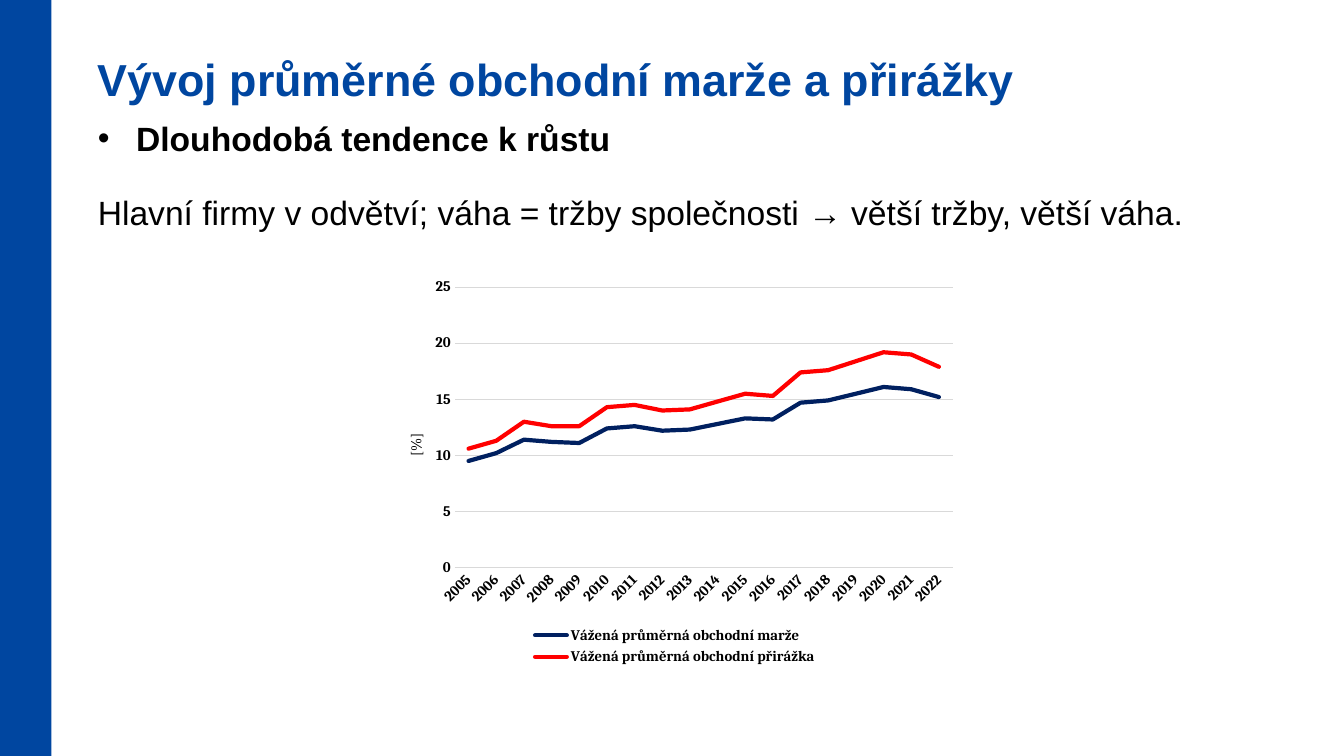
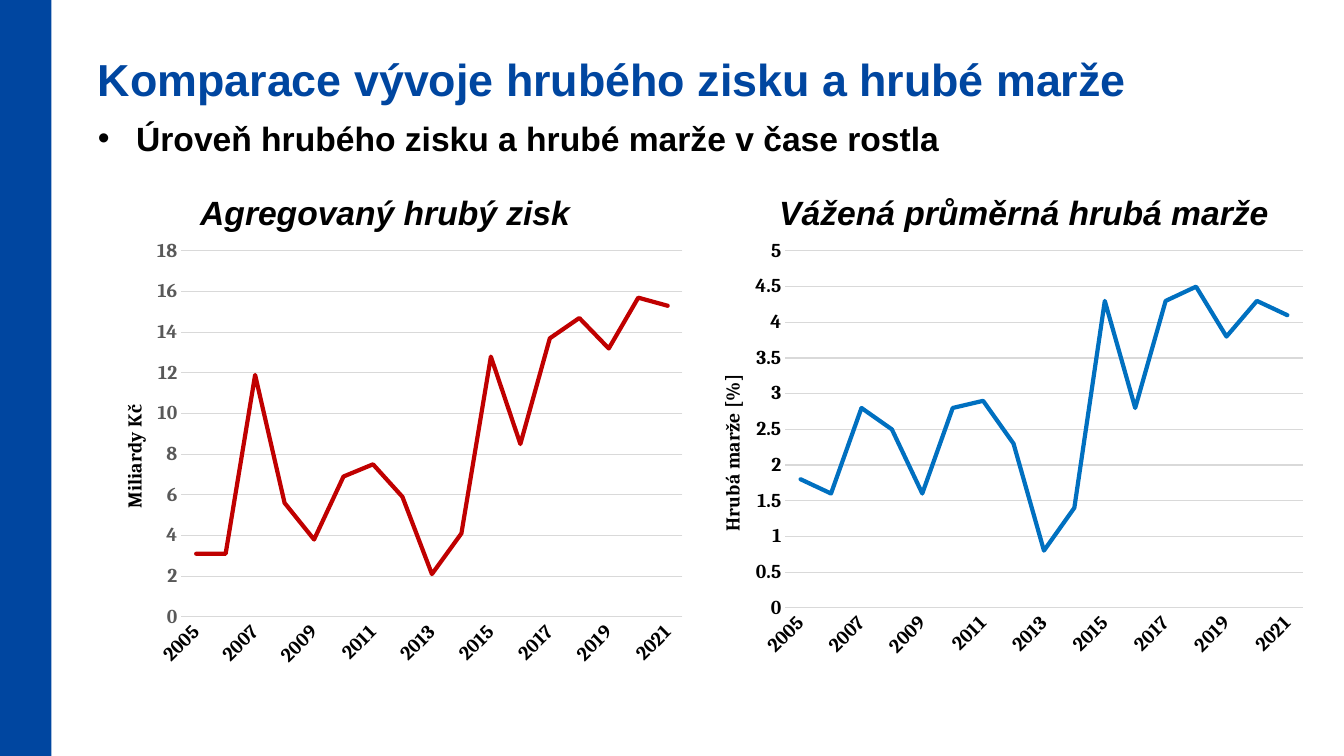
"""Build two slides on the development of retail margins and gross profit."""
from lxml import etree
from pptx import Presentation
from pptx.chart.data import CategoryChartData
from pptx.dml.color import RGBColor
from pptx.enum.chart import XL_CHART_TYPE, XL_LEGEND_POSITION, XL_TICK_MARK
from pptx.enum.shapes import MSO_SHAPE
from pptx.enum.text import MSO_ANCHOR, MSO_AUTO_SIZE, PP_ALIGN
from pptx.oxml.ns import qn
from pptx.util import Pt

PX = 9144
LEFT, CENTER = PP_ALIGN.LEFT, PP_ALIGN.CENTER
TOP, FIXED = MSO_ANCHOR.TOP, MSO_AUTO_SIZE.NONE
NO_TICK = XL_TICK_MARK.NONE
COLORS = {
    "brand": "0046A0", "text": "000000", "muted": "595959", "grid": "D9D9D9",
    "navy": "002060", "red": "FF0000", "crimson": "C00000", "blue": "0070C0",
}
RGB = {name: RGBColor.from_string(value) for name, value in COLORS.items()}
TEXT_FONT, CHART_FONT = "Arial", "Cambria"
TITLE_AREA = (97, 51, 1184, 56)
BULLET_AREA = (97, 117, 1184, 45)
INDENT = 38

SLIDES = [
    {
        "title": "Vývoj průměrné obchodní marže a přirážky",
        "bullet": "Dlouhodobá tendence k růstu",
        "captions": [
            ("Hlavní firmy v odvětví; váha = tržby společnosti → větší tržby, větší váha.",
             (97, 190, 1177, 45), LEFT, False),
        ],
        "charts": [
            {
                "area": (377, 268, 580, 397), "plot": (451, 285, 494, 278),
                "axis_title": "[%]", "title_at": (400, 427), "title_bold": False,
                "size": 10.5, "value_color": "text", "scale": (25, 5), "skip": 1,
                "legend": (527, 618, 285, 46), "last_year": 2022,
                "series": [
                    ("Vážená průměrná obchodní marže", "navy",
                     [9.5, 10.2, 11.4, 11.2, 11.1, 12.4, 12.6, 12.2, 12.3,
                      12.8, 13.3, 13.2, 14.7, 14.9, 15.5, 16.1, 15.9, 15.2]),
                    ("Vážená průměrná obchodní přirážka", "red",
                     [10.6, 11.3, 13, 12.6, 12.6, 14.3, 14.5, 14, 14.1,
                      14.8, 15.5, 15.3, 17.4, 17.6, 18.4, 19.2, 19, 17.9]),
                ],
            },
        ],
    },
    {
        "title": "Komparace vývoje hrubého zisku a hrubé marže",
        "bullet": "Úroveň hrubého zisku a hrubé marže v čase rostla",
        "captions": [
            ("Agregovaný hrubý zisk", (92, 190, 580, 45), CENTER, True),
            ("Vážená průměrná hrubá marže", (728, 190, 575, 45), CENTER, True),
        ],
        "charts": [
            {
                "area": (91, 229, 598, 442), "plot": (180, 249, 497, 363),
                "axis_title": "Miliardy Kč", "title_at": (117, 398), "title_bold": True,
                "size": 14, "value_color": "muted", "scale": (18, 2), "skip": 2,
                "legend": None, "last_year": 2021,
                "series": [
                    ("Agregovaný hrubý zisk", "crimson",
                     [3.1, 3.1, 11.9, 5.6, 3.8, 6.9, 7.5, 5.9, 2.1,
                      4.1, 12.8, 8.5, 13.7, 14.7, 13.2, 15.7, 15.3]),
                ],
            },
            {
                "area": (683, 229, 620, 433), "plot": (779, 249, 513, 354),
                "axis_title": "Hrubá marže [%]", "title_at": (710, 368), "title_bold": True,
                "size": 14, "value_color": "text", "scale": (5, 0.5), "skip": 2,
                "legend": None, "last_year": 2021,
                "series": [
                    ("Vážená průměrná hrubá marže", "blue",
                     [1.8, 1.6, 2.8, 2.5, 1.6, 2.8, 2.9, 2.3, 0.8,
                      1.4, 4.3, 2.8, 4.3, 4.5, 3.8, 4.3, 4.1]),
                ],
            },
        ],
    },
]


def write(box, area, text, size, color, bold, italic=False, align=LEFT):
    """Place a text shape and fill it with one formatted run."""
    box.left, box.top, box.width, box.height = [n * PX for n in area]
    frame = box.text_frame
    frame.word_wrap, frame.auto_size, frame.vertical_anchor = True, FIXED, TOP
    frame.margin_left = frame.margin_top = frame.margin_right = frame.margin_bottom = 0
    para = frame.paragraphs[0]
    para.alignment, para.space_before = align, Pt(0)
    span = para.add_run()
    span.text = text
    span.font.name, span.font.size = TEXT_FONT, Pt(size)
    span.font.bold, span.font.italic = bold, italic
    span.font.color.rgb = RGB[color]
    return para


def set_layout(parent, index, chart_area, area, inner=False):
    """Fix a chart part at an area given in slide pixels."""
    for old in parent.findall(qn("c:layout")):
        parent.remove(old)
    layout = etree.Element(qn("c:layout"))
    manual = etree.SubElement(layout, qn("c:manualLayout"))
    left, top, width, height = chart_area
    fractions = [(area[0] - left) / width, (area[1] - top) / height]
    fractions += [n / whole for n, whole in zip(area[2:], (width, height))]
    settings = [("layoutTarget", "inner")] if inner else []
    settings += [("xMode", "edge"), ("yMode", "edge")]
    settings += [(tag, f"{n:.4f}") for tag, n in zip("xywh", fractions)]
    for tag, value in settings:
        etree.SubElement(manual, qn("c:" + tag)).set("val", value)
    parent.insert(index, layout)


deck = Presentation()
deck.slide_width, deck.slide_height = 1333 * PX, 750 * PX
layout = deck.slide_layouts[1]

for number, content in enumerate(SLIDES):
    page = deck.slides.add_slide(layout)
    if number == 0:
        band = page.shapes.add_shape(MSO_SHAPE.RECTANGLE, 0, 0, 51 * PX, 750 * PX)
        band.shadow.inherit = False
        band.fill.solid()
        band.fill.fore_color.rgb = RGB["brand"]
        band.line.fill.background()
        layout.shapes.element.insert(2, band.element)

    write(page.shapes.title, TITLE_AREA, content["title"], 32, "brand", True)
    bullet = write(page.placeholders[1], BULLET_AREA, content["bullet"], 24, "text", True)
    properties = bullet._p.get_or_add_pPr()
    properties.set("marL", str(INDENT * PX))
    properties.set("indent", str(-INDENT * PX))
    etree.SubElement(properties, qn("a:buChar")).set("char", "•")

    for text, area, align, strong in content["captions"]:
        caption = page.shapes.add_textbox(0, 0, PX, PX)
        write(caption, area, text, 24, "text", strong, strong, align)

    for item in content["charts"]:
        area = item["area"]
        data = CategoryChartData()
        data.categories = [str(year) for year in range(2005, item["last_year"] + 1)]
        for name, _, values in item["series"]:
            data.add_series(name, values)
        chart = page.shapes.add_chart(
            XL_CHART_TYPE.LINE, *[n * PX for n in area], data).chart
        chart.has_title = False
        chart.font.name, chart.font.size, chart.font.bold = CHART_FONT, Pt(10.5), True
        chart.font.color.rgb = RGB["text"]
        plot = chart.plots[0]
        plot.vary_by_categories = False
        for series, (_, color, _) in zip(plot.series, item["series"]):
            series.smooth = False
            series.format.line.color.rgb = RGB[color]
            series.format.line.width = Pt(3)
        for line in chart.element.xpath(".//c:ser/c:spPr/a:ln"):
            line.set("cap", "rnd")

        years, scale = chart.category_axis, chart.value_axis
        for axis, color in ((years, "text"), (scale, item["value_color"])):
            axis.major_tick_mark = axis.minor_tick_mark = NO_TICK
            font = axis.tick_labels.font
            font.name, font.size, font.bold = CHART_FONT, Pt(item["size"]), True
            font.color.rgb = RGB[color]
        years.format.line.color.rgb = RGB["grid"]
        years.format.line.width = Pt(0.75)
        years_xml = chart.element.xpath(".//c:catAx")[0]
        years_xml.xpath("c:txPr/a:bodyPr")[0].set("rot", "-2700000")
        skip = etree.Element(qn("c:tickLblSkip"))
        skip.set("val", str(item["skip"]))
        years_xml.find(qn("c:noMultiLvlLbl")).addprevious(skip)

        scale.minimum_scale = 0
        scale.maximum_scale, scale.major_unit = item["scale"]
        scale.tick_labels.number_format = "General"
        scale.tick_labels.number_format_is_linked = False
        scale.format.line.fill.background()
        scale.has_major_gridlines = True
        scale.major_gridlines.format.line.color.rgb = RGB["grid"]
        scale.major_gridlines.format.line.width = Pt(0.75)
        span = scale.axis_title.text_frame.paragraphs[0].add_run()
        span.text = item["axis_title"]
        span.font.name, span.font.size = CHART_FONT, Pt(item["size"])
        span.font.bold = item["title_bold"]
        span.font.color.rgb = RGB["text"]
        title_xml = chart.element.xpath(".//c:valAx/c:title")[0]
        title_body = title_xml.xpath(".//a:bodyPr")[0]
        title_body.set("rot", "-5400000")
        title_body.set("vert", "horz")
        set_layout(title_xml, 1, area, item["title_at"])
        set_layout(chart.element.xpath(".//c:plotArea")[0], 0, area, item["plot"], True)

        chart.has_legend = item["legend"] is not None
        if chart.has_legend:
            chart.legend.position = XL_LEGEND_POSITION.BOTTOM
            chart.legend.include_in_layout = False
            font = chart.legend.font
            font.name, font.size, font.bold = CHART_FONT, Pt(10.5), True
            font.color.rgb = RGB["text"]
            set_layout(chart.element.xpath(".//c:legend")[0], 1, area, item["legend"])

deck.save("out.pptx")
